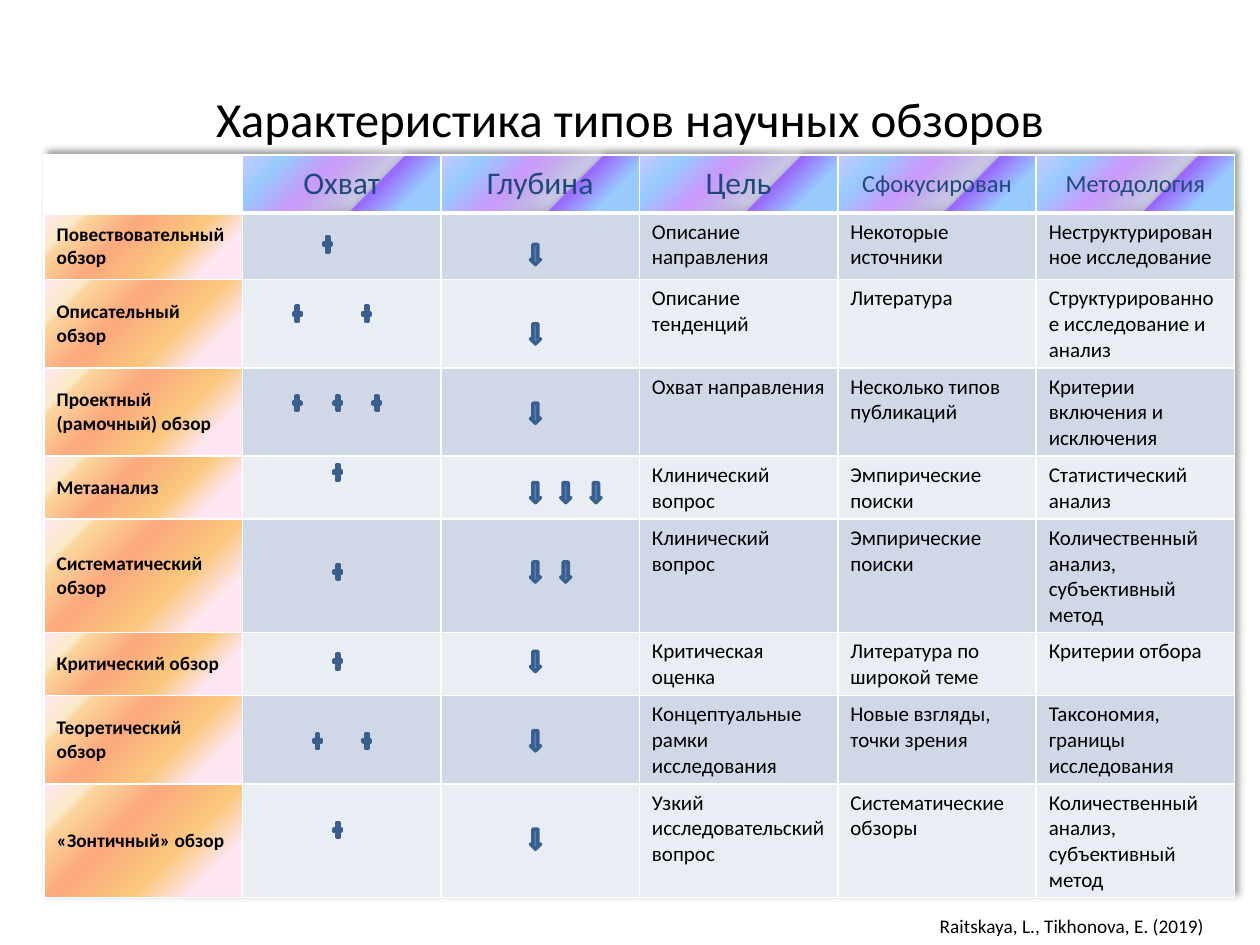
from lxml import etree
from pptx import Presentation
from pptx.dml.color import RGBColor
from pptx.enum.shapes import MSO_SHAPE as Shape
from pptx.enum.text import MSO_ANCHOR as Anchor, PP_ALIGN as Align
from pptx.oxml.ns import qn
from pptx.util import Inches, Pt

# Content
TITLE = "Характеристика типов научных обзоров"
SOURCE = "Raitskaya, L., Tikhonova, E. (2019)"
HEADERS = ["", "Охват", "Глубина", "Цель", "Сфокусирован", "Методология"]
# Name, aim, focus, methodology, row height
REVIEWS = [
    ("Повествовательный обзор", "Описание направления", "Некоторые источники",
     "Неструктурированное исследование", 0.53),
    ("Описательный обзор", "Описание тенденций", "Литература",
     "Структурированное исследование и анализ", 0.53),
    ("Проектный (рамочный) обзор", "Охват направления",
     "Несколько типов публикаций", "Критерии включения и исключения", 0.53),
    ("Метаанализ", "Клинический вопрос", "Эмпирические поиски",
     "Статистический анализ", 0.46),
    ("Систематический обзор", "Клинический вопрос", "Эмпирические поиски",
     "Количественный анализ, субъективный метод", 0.53),
    ("Критический обзор", "Критическая оценка", "Литература по широкой теме",
     "Критерии отбора", 0.46),
    ("Теоретический обзор", "Концептуальные рамки исследования",
     "Новые взгляды, точки зрения", "Таксономия, границы исследования", 0.53),
    ("«Зонтичный» обзор", "Узкий исследовательский вопрос",
     "Систематические обзоры", "Количественный анализ, субъективный метод", 0.46),
]
# Per review: left edges and top of the pluses, count and top of the arrows
MARKS = [
    ([2.56], 1.86, 1, 1.94),
    ([2.32, 2.87], 2.41, 1, 2.57),
    ([2.32, 2.64, 2.95], 3.12, 1, 3.2),
    ([2.64], 3.67, 3, 3.83),
    ([2.64], 4.46, 2, 4.46),
    ([2.64], 5.17, 1, 5.17),
    ([2.48, 2.87], 5.8, 1, 5.8),
    ([2.64], 6.51, 1, 6.58),
]
ARROW_X, ARROW_STEP = 4.21, 0.24
MARK_W, MARK_H = 0.08, 0.16
HEADER_H, COL_W = 0.46, 1.575

THEME = {
    "font": "Calibri",
    "title": {"size": Pt(28), "bold": False, "color": "000000"},
    "header": {"size": Pt(18), "bold": False, "color": "1F497D"},
    "header_small": {"size": Pt(14), "bold": False, "color": "1F497D"},
    "name": {"size": Pt(11), "bold": True, "color": "000000"},
    "body": {"size": Pt(12), "bold": False, "color": "000000"},
    "source": {"size": Pt(11), "bold": False, "color": "000000"},
    "bands": ["D0D8E8", "E9EDF4"],
    "white": "FFFFFF",
    "mark_fill": "4F81BD",
    "mark_line": "3A5F8C",
    # Gradient stops: position, colour, opacity, all in percent
    "header_grad": [(18, "99CCFF", 100), (36, "9966FF", 100), (37, "CCCCFF", 48),
                    (61, "CC99FF", 100), (82, "99CCFF", 100), (100, "CCCCFF", 100)],
    "name_grad": [(18, "FEE7F2", 100), (36, "FAC77D", 100), (61, "FBA97D", 100),
                  (82, "FBD49C", 100), (85, "FBEAC7", 100), (100, "FEE7F2", 100)],
}


def sub(parent, tag, **attrs):
    return etree.SubElement(parent, qn("a:" + tag),
                            {k: str(v) for k, v in attrs.items()})


def write(tf, text, style, align=Align.LEFT):
    p = tf.paragraphs[0]
    p.alignment = align
    r = p.add_run()
    r.text = text
    fmt = THEME[style]
    for name, value in {"name": THEME["font"], "size": fmt["size"],
                        "bold": fmt["bold"]}.items():
        setattr(r.font, name, value)
    r.font.color.rgb = RGBColor.from_string(fmt["color"])


def add_label(slide, box, text, style, align=Align.LEFT, wrap=True):
    tf = slide.shapes.add_textbox(*map(Inches, box)).text_frame
    tf.word_wrap = wrap
    tf.vertical_anchor = Anchor.MIDDLE if wrap else Anchor.TOP
    write(tf, text, style, align)


def border(cell, bottom):
    tc_pr = cell._tc.get_or_add_tcPr()
    for side, width in {"L": 1, "R": 1, "T": 1, "B": bottom}.items():
        ln = sub(tc_pr, "ln" + side, w=Pt(width))
        sub(sub(ln, "solidFill"), "srgbClr", val=THEME["white"])


def fill(cell, paint):
    if isinstance(paint, str):
        cell.fill.solid()
        cell.fill.fore_color.rgb = RGBColor.from_string(paint)
        return
    grad = sub(cell._tc.get_or_add_tcPr(), "gradFill", rotWithShape=1)
    stops = sub(grad, "gsLst")
    for pos, color, opacity in paint:
        clr = sub(sub(stops, "gs", pos=pos * 1000), "srgbClr", val=color)
        if opacity < 100:
            sub(clr, "alpha", val=opacity * 1000)
    sub(sub(grad, "path", path="circle"), "fillToRect", l=100000, t=100000)


def fill_cell(cell, text, style, paint, align=Align.LEFT, anchor=None, bottom=1):
    border(cell, bottom)
    fill(cell, paint)
    if anchor is not None:
        cell.vertical_anchor = anchor
    if text:
        write(cell.text_frame, text, style, align)


def add_review_table(slide):
    frame = slide.shapes.add_table(len(REVIEWS) + 1, len(HEADERS), Inches(0.35),
                                   Inches(1.23), Inches(9.45), Inches(5.89))
    table = frame.table
    for col in table.columns:
        col.width = Inches(COL_W)
    for row, height in zip(table.rows, [HEADER_H] + [r[-1] for r in REVIEWS]):
        row.height = Inches(height)
    frame.height = Inches(5.89)

    # Soft shadow to the upper right
    effects = etree.Element(qn("a:effectLst"))
    shadow = sub(effects, "outerShdw", blurRad=Inches(0.05), dist=Inches(0.04),
                 dir=18900000, algn="bl", rotWithShape=0)
    sub(sub(shadow, "prstClr", val="black"), "alpha", val=40000)
    table._tbl.tblPr.insert(0, effects)

    # Header row
    for c, text in enumerate(HEADERS):
        fill_cell(table.cell(0, c), text, "header" if c < 4 else "header_small",
                  THEME["header_grad"] if text else THEME["white"],
                  Align.CENTER, Anchor.MIDDLE, bottom=3)
    # Review rows
    for i, (name, *details, _) in enumerate(REVIEWS):
        fill_cell(table.cell(i + 1, 0), name, "name", THEME["name_grad"],
                  anchor=Anchor.MIDDLE)
        for c, text in enumerate(["", ""] + details, 1):
            fill_cell(table.cell(i + 1, c), text, "body", THEME["bands"][i % 2])


def add_mark(slide, kind, x, y):
    sp = slide.shapes.add_shape(kind, *map(Inches, (x, y, MARK_W, MARK_H)))
    sp.shadow.inherit = False
    sp.fill.solid()
    sp.fill.fore_color.rgb = RGBColor.from_string(THEME["mark_fill"])
    sp.line.color.rgb = RGBColor.from_string(THEME["mark_line"])
    sp.line.width = Pt(2)


def main():
    prs = Presentation()
    prs.slide_width, prs.slide_height = Inches(10), Inches(7.5)
    s = prs.slides.add_slide(prs.slide_layouts[6])

    add_label(s, (0.75, 0.13, 8.5, 1.61), TITLE, "title", Align.CENTER)
    add_review_table(s)
    # Scope and depth marks
    for plus_xs, plus_y, arrows, arrow_y in MARKS:
        for x in plus_xs:
            add_mark(s, Shape.MATH_PLUS, x, plus_y)
        for i in range(arrows):
            add_mark(s, Shape.DOWN_ARROW, ARROW_X + i * ARROW_STEP, arrow_y)
    add_label(s, (7.36, 7.21, 2.32, 0.29), SOURCE, "source", wrap=False)
    prs.save("out.pptx")


if __name__ == "__main__":
    main()
